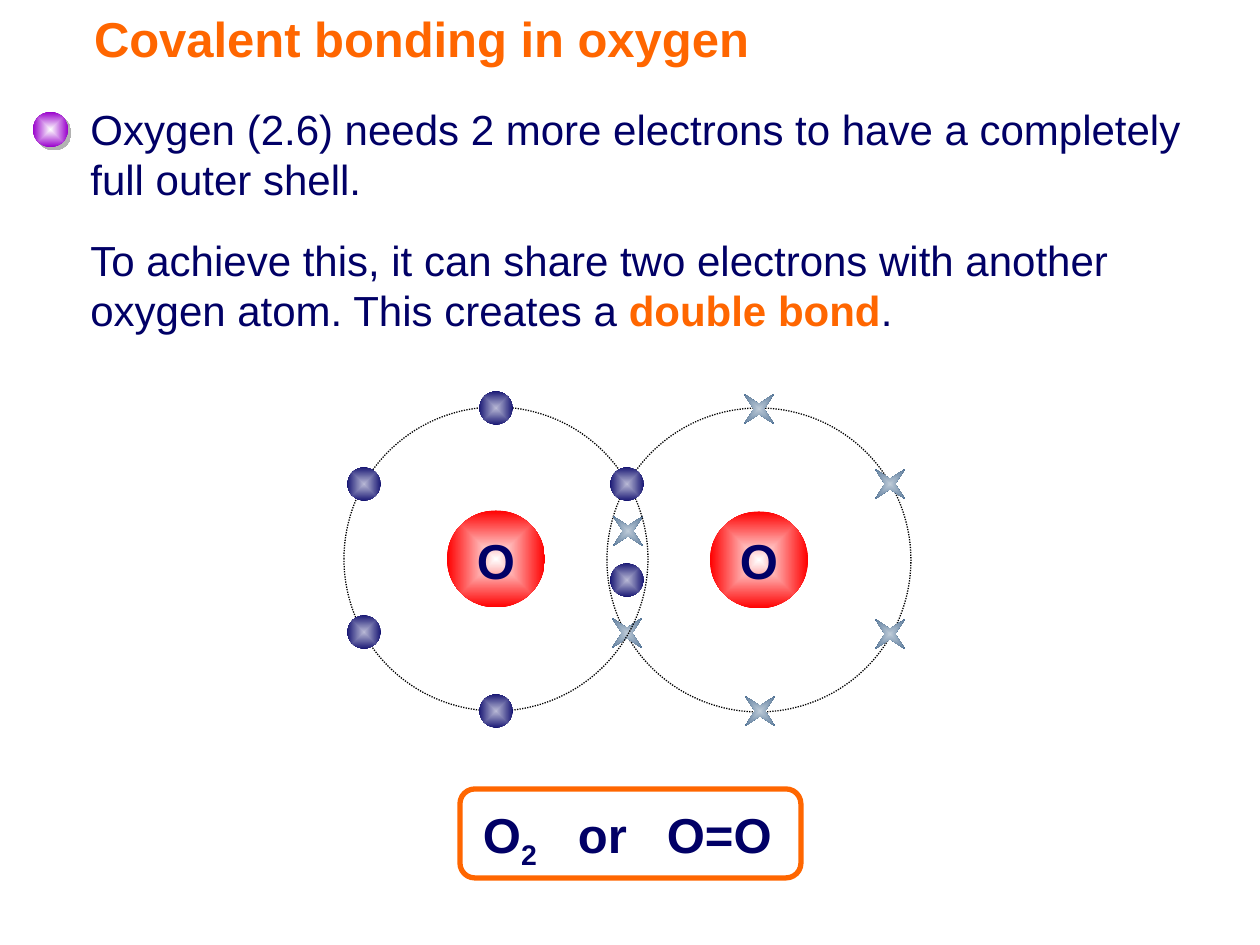
import pptx
import pptx.util
import pptx.dml.color
import pptx.enum.shapes
import pptx.enum.text
import pptx.oxml
import pptx.oxml.ns

PX = 914400 / 126
RGB = pptx.dml.color.RGBColor
SHAPE = pptx.enum.shapes.MSO_SHAPE
ALIGN = pptx.enum.text.PP_ALIGN
ANCHOR = pptx.enum.text.MSO_ANCHOR
qn = pptx.oxml.ns.qn
NS = pptx.oxml.ns.nsdecls("a")

ORANGE = RGB(0xFF, 0x66, 0x00)
NAVY = RGB(0x01, 0x00, 0x66)
WHITE = RGB(0xFF, 0xFF, 0xFF)
BLACK = RGB(0x00, 0x00, 0x00)
PURPLE = RGB(0x99, 0x00, 0xCC)
RED = RGB(0xFF, 0x00, 0x00)
PALE_NAVY = RGB(0xB9, 0xB9, 0xD5)
STEEL = RGB(0x01, 0x33, 0x66)
PALE_STEEL = RGB(0xBE, 0xCB, 0xD8)

BODY = {"size": pptx.util.Pt(24), "name": "Arial", "bold": False}
HEAD = {"size": pptx.util.Pt(28), "name": "Arial", "bold": True}

TITLE = "Covalent bonding in oxygen"
BODY_TEXTS = [
    ((78, 97, 1164, 113),
     [("Oxygen (2.6) needs 2 more electrons to have a completely full outer shell.", NAVY, False)]),
    ((78, 228, 1182, 113),
     [("To achieve this, it can share two electrons with another oxygen atom. This creates a ", NAVY, False),
      ("double bond", ORANGE, True), (".", NAVY, False)]),
]
FORMULA = [("O", False), ("2", True), ("\tor\tO=O", False)]
FORMULA_TABS = [95, 184]

ATOMS = [
    {"center": (759, 560), "shape": SHAPE.STAR_4_POINT, "size": 42,
     "colors": (PALE_STEEL, STEEL),
     "electrons": [(759, 409, 45), (890, 484, 135), (890, 634, 135),
                   (760, 711, 225), (627, 633, 315), (628, 531, 225)]},
    {"center": (496, 559), "shape": SHAPE.OVAL, "size": 33,
     "colors": (PALE_NAVY, NAVY),
     "electrons": [(496, 408, 348), (364, 484, 258), (627, 484, 258),
                   (364, 632, 258), (496, 711, 348), (627, 580, 258)]},
]


def emu(*lengths):
    return [round(v * PX) for v in lengths]


def around(x, y, w, h):
    return x - w / 2, y - h / 2, w, h


def set_font(font, color, style):
    for key, value in style.items():
        setattr(font, key, value)
    font.color.rgb = color


def add_run(p, text, color, style):
    r = p.add_run()
    r.text = text
    set_font(r.font, color, style)
    return r


def add_text(shapes, box):
    tf = shapes.add_textbox(*emu(*box)).text_frame
    tf.word_wrap = True
    return tf


def add_plain(shapes, kind, box):
    sp = shapes.add_shape(kind, *emu(*box))
    sp.shadow.inherit = False
    sp.fill.background()
    sp.line.fill.background()
    return sp


def add_glow(shapes, kind, box, colors):
    sp = add_plain(shapes, kind, box)
    sp.fill.gradient()
    for stop, color, position in zip(sp.fill.gradient_stops, colors, (0, 1)):
        stop.color.rgb = color
        stop.position = position
    grad = sp._element.spPr.find(qn("a:gradFill"))
    grad.replace(grad.find(qn("a:lin")), pptx.oxml.parse_xml(
        f'<a:path {NS} path="shape"><a:fillToRect l="50000" t="50000" r="50000" b="50000"/></a:path>'))
    return sp


def add_atom(shapes, atom):
    x, y = atom["center"]
    add_glow(shapes, SHAPE.OVAL, around(x, y, 98, 97), (WHITE, RED))
    shell = add_plain(shapes, SHAPE.OVAL, around(x, y, 304, 304))
    shell.line.color.rgb = BLACK
    shell.line.width = pptx.util.Pt(0.75)
    shell.line.dash_style = pptx.enum.dml.MSO_LINE.ROUND_DOT
    for ex, ey, angle in atom["electrons"]:
        size = atom["size"]
        sp = add_glow(shapes, atom["shape"], around(ex, ey, size, size), atom["colors"])
        sp.rotation = angle
        if atom["shape"] == SHAPE.STAR_4_POINT:
            sp.adjustments[0] = 0.125
    p = add_text(shapes, around(x, 560, 74, 72)).paragraphs[0]
    p.alignment = ALIGN.CENTER
    add_run(p, "O", NAVY, HEAD)


def add_formula(shapes):
    tf = add_text(shapes, (461, 798, 336, 72))
    tf.margin_left, tf.margin_right = emu(22, 0)
    p = tf.paragraphs[0]
    stops = "".join(f'<a:tab pos="{pos}" algn="l"/>' for pos in emu(*FORMULA_TABS))
    p._p.get_or_add_pPr().append(pptx.oxml.parse_xml(f"<a:tabLst {NS}>{stops}</a:tabLst>"))
    for text, subscript in FORMULA:
        r = add_run(p, text, NAVY, HEAD)
        if subscript:
            r._r.get_or_add_rPr().set("baseline", "-25000")
    frame = add_plain(shapes, SHAPE.ROUNDED_RECTANGLE, (460, 789, 341, 89))
    frame.line.color.rgb = ORANGE
    frame.line.width = pptx.util.Pt(3)


def main():
    prs = pptx.Presentation()
    prs.slide_width, prs.slide_height = emu(1260, 945)
    s = prs.slides.add_slide(prs.slide_layouts[5])

    title = s.shapes.title
    title.left, title.top, title.width, title.height = emu(0, 0, 898, 76)
    tf = title.text_frame
    tf.margin_left = emu(94)[0]
    tf.vertical_anchor = ANCHOR.MIDDLE
    p = tf.paragraphs[0]
    p.alignment = ALIGN.LEFT
    add_run(p, TITLE, ORANGE, HEAD)

    bullet = add_glow(s.shapes, SHAPE.OVAL, (33, 112, 35, 35), (WHITE, PURPLE))
    bullet._element.spPr.find(qn("a:effectLst")).append(pptx.oxml.parse_xml(
        f'<a:outerShdw {NS} dist="35560" dir="2700000" algn="ctr" rotWithShape="0">'
        '<a:srgbClr val="B2B2B2"/></a:outerShdw>'))

    for box, runs in BODY_TEXTS:
        p = add_text(s.shapes, box).paragraphs[0]
        for text, color, bold in runs:
            add_run(p, text, color, {**BODY, "bold": bold})

    add_formula(s.shapes.add_group_shape().shapes)
    molecule = s.shapes.add_group_shape()
    for atom in ATOMS:
        add_atom(molecule.shapes, atom)

    prs.save("out.pptx")


if __name__ == "__main__":
    main()
